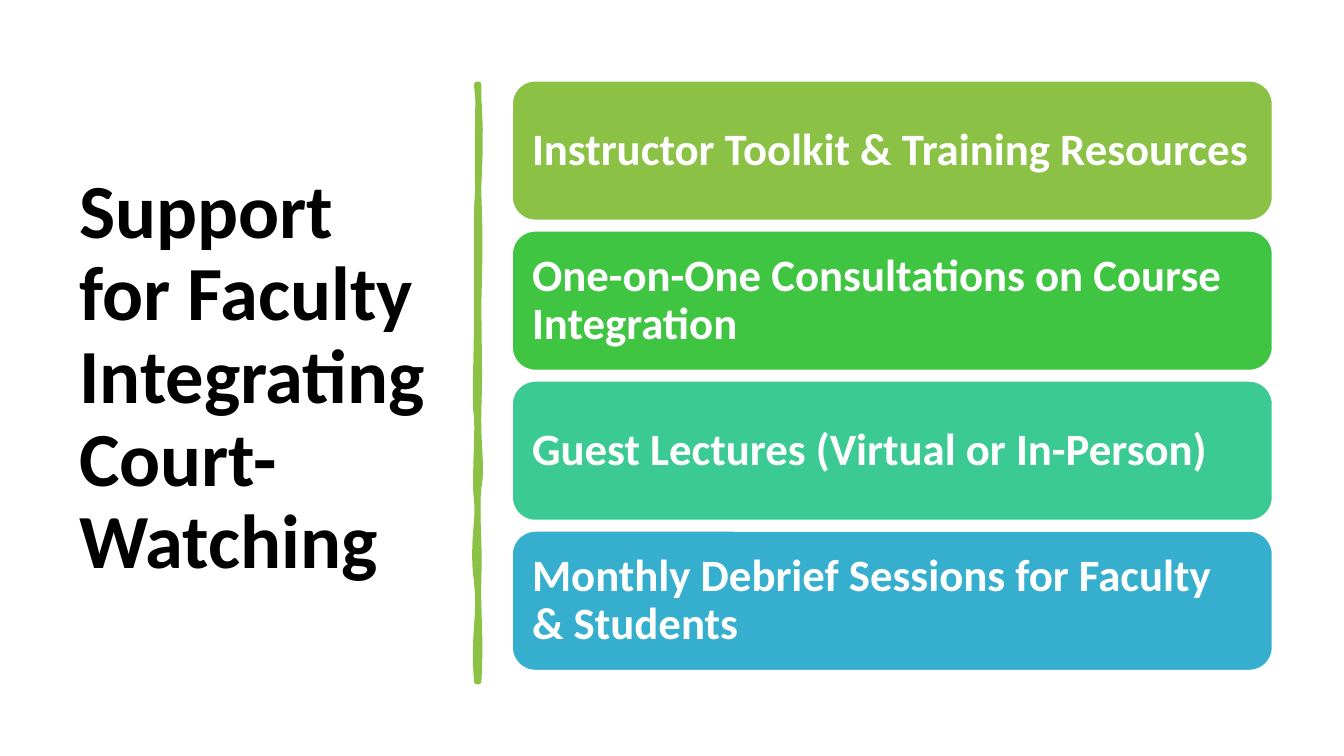
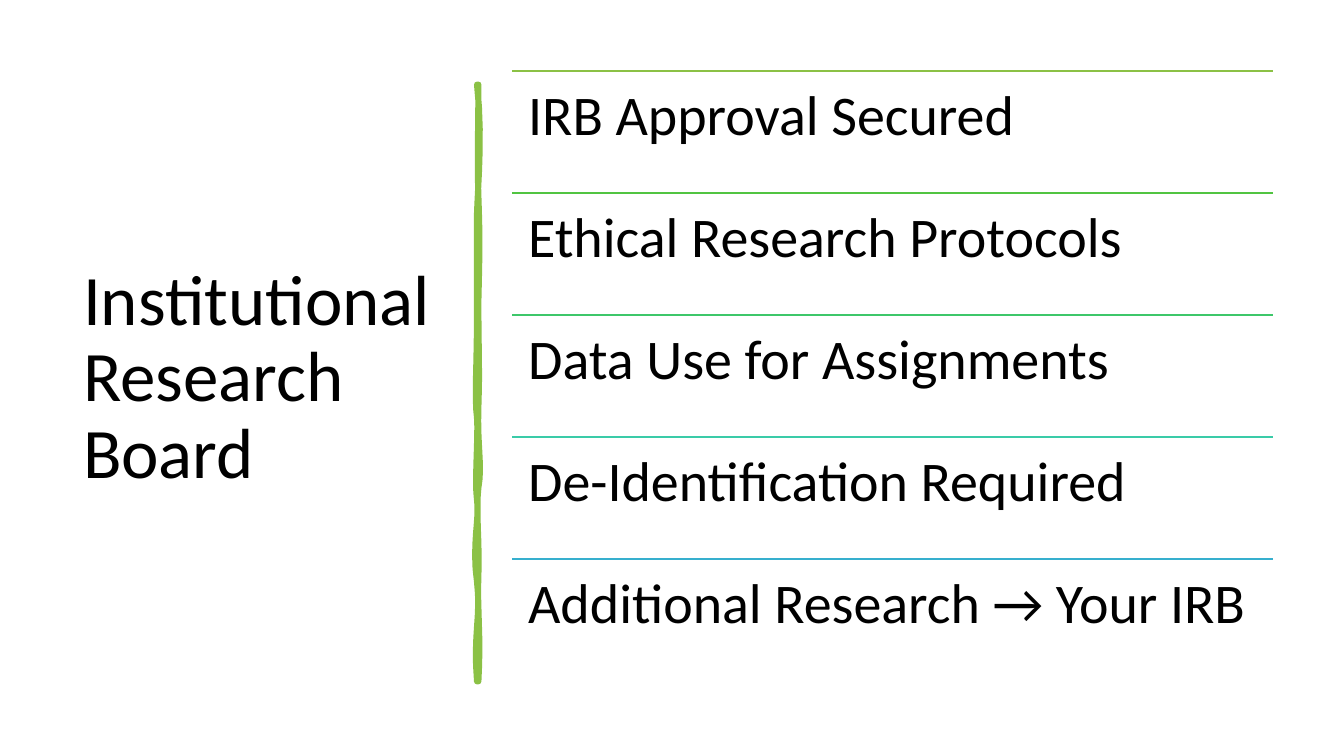
from dataclasses import dataclass

from lxml import etree
from pptx import Presentation
from pptx.dml.color import RGBColor
from pptx.enum.shapes import MSO_CONNECTOR, MSO_SHAPE
from pptx.enum.text import MSO_ANCHOR, PP_ALIGN
from pptx.oxml.ns import qn
from pptx.util import Inches, Pt

ROUNDED = MSO_SHAPE.ROUNDED_RECTANGLE
STRAIGHT = MSO_CONNECTOR.STRAIGHT
TOP, MIDDLE = MSO_ANCHOR.TOP, MSO_ANCHOR.MIDDLE
LEFT = PP_ALIGN.LEFT


@dataclass(frozen=True)
class Theme:
    font: str = "Calibri"
    ink: str = "000000"
    paper: str = "FFFFFF"
    accent: str = "8BC145"
    support_title: int = 41
    review_title: int = 38
    card_text: int = 24
    topic_text: int = 30
    hairline: float = 1
    brush: float = 3.25


THEME = Theme()

prs = Presentation()
prs.slide_width, prs.slide_height = Inches(10), Inches(5.625)

# The slide is a grid of 100 columns by 100 rows.
COL, ROW = prs.slide_width / 100, prs.slide_height / 100
TITLE_BOX = [int(v) for v in (5.2 * COL, 9.42 * ROW, 28 * COL, 81.4 * ROW)]
BODY_LEFT, BODY_WIDTH = int(38.1 * COL), int(56.6 * COL)
CARD_TOP, CARD_PITCH, CARD_HEIGHT = 10.67 * ROW, 19.85 * ROW, int(18.5 * ROW)
TOPIC_TOP, TOPIC_PITCH = 9.42 * ROW, 16.13 * ROW

# Brush stroke in inches: a start, then cubic curves (control, control, end).
STROKE_START = (3.56, 0.63)
STROKE_CURVES = [
    (3.56, 1.03, 3.55, 1.17, 3.56, 1.46),
    (3.57, 1.74, 3.57, 1.85, 3.56, 2.24),
    (3.56, 2.63, 3.57, 2.73, 3.56, 3.03),
    (3.55, 3.32, 3.59, 3.46, 3.56, 3.63),
    (3.54, 3.80, 3.57, 4.06, 3.56, 4.28),
    (3.55, 4.51, 3.58, 4.75, 3.56, 5.07),
    (3.56, 5.07, 3.55, 5.07, 3.55, 5.07),
    (3.52, 4.72, 3.58, 4.59, 3.55, 4.33),
    (3.51, 4.06, 3.57, 3.85, 3.55, 3.72),
    (3.53, 3.59, 3.56, 3.26, 3.55, 3.11),
    (3.53, 2.97, 3.55, 2.70, 3.55, 2.33),
    (3.55, 1.96, 3.55, 1.84, 3.55, 1.68),
    (3.54, 1.52, 3.60, 1.07, 3.55, 0.63),
]
STEPS = 8

stroke_points = []
x0, y0 = STROKE_START
for x1, y1, x2, y2, x3, y3 in STROKE_CURVES:
    for step in range(1, STEPS + 1):
        t = step / STEPS
        a, b, c, d = (1 - t) ** 3, 3 * t * (1 - t) ** 2, 3 * t * t * (1 - t), t ** 3
        stroke_points.append((Inches(a * x0 + b * x1 + c * x2 + d * x3),
                              Inches(a * y0 + b * y1 + c * y2 + d * y3)))
    x0, y0 = x3, y3


def write(shape, text, size, color, inset, anchor=MIDDLE, bold=False):
    """Fill a shape with one left-aligned paragraph; inset is (sides, top and bottom)."""
    frame = shape.text_frame
    frame.word_wrap = True
    frame.vertical_anchor = anchor
    frame.margin_left = frame.margin_right = Inches(inset[0])
    frame.margin_top = frame.margin_bottom = Inches(inset[1])
    paragraph = frame.paragraphs[0]
    paragraph.text = text
    paragraph.alignment = LEFT
    paragraph.line_spacing = 0.9
    font = paragraph.runs[0].font
    font.name, font.size, font.bold = THEME.font, Pt(size), bold
    font.color.rgb = RGBColor.from_string(color)


def titled_slide(title, size, inset, bold):
    """Add a slide with its title on the left and the brush stroke beside it."""
    slide = prs.slides.add_slide(prs.slide_layouts[6])
    slide.background.fill.solid()
    slide.background.fill.fore_color.rgb = RGBColor.from_string(THEME.paper)
    write(slide.shapes.add_textbox(*TITLE_BOX), title, size, THEME.ink, inset, bold=bold)
    outline = slide.shapes.build_freeform(*(Inches(v) for v in STROKE_START))
    outline.add_line_segments(stroke_points, close=True)
    divider = outline.convert_to_shape()
    divider.shadow.inherit = False
    divider.fill.solid()
    divider.fill.fore_color.rgb = RGBColor.from_string(THEME.accent)
    divider.line.color.rgb = RGBColor.from_string(THEME.accent)
    divider.line.width = Pt(THEME.brush)
    return slide


# Slide 1: support offers as coloured cards
support = titled_slide("Support for Faculty Integrating Court-Watching",
                       THEME.support_title, (0.07, 0.04), True)
offers = [
    ("Instructor Toolkit & Training Resources", THEME.accent),
    ("One-on-One Consultations on Course Integration", "40C543"),
    ("Guest Lectures (Virtual or In-Person)", "3BCA93"),
    ("Monthly Debrief Sessions for Faculty & Students", "36AFCE"),
]
for index, (offer, color) in enumerate(offers):
    card = support.shapes.add_shape(ROUNDED, BODY_LEFT, int(CARD_TOP + index * CARD_PITCH),
                                    BODY_WIDTH, CARD_HEIGHT)
    card.shadow.inherit = False
    card.fill.solid()
    card.fill.fore_color.rgb = RGBColor.from_string(color)
    card.line.color.rgb = RGBColor.from_string(THEME.paper)
    card.line.width = Pt(THEME.hairline)
    # The rounded corners already indent the text by about 0.05 inch.
    write(card, offer, THEME.card_text, THEME.paper, (0.1, 0.1), bold=True)

# Slide 2: review topics under coloured rules
review = titled_slide("Institutional Research Board", THEME.review_title, (0.1, 0.05), False)
topics = [
    ("IRB Approval Secured", THEME.accent),
    ("Ethical Research Protocols", "51C441"),
    ("Data Use for Assignments", "3EC76A"),
    ("De-Identification Required", "3ACBA8"),
    ("Additional Research → Your IRB", "36AFCE"),
]
for index, (topic, color) in enumerate(topics):
    top = int(TOPIC_TOP + index * TOPIC_PITCH)
    rule = review.shapes.add_connector(STRAIGHT, BODY_LEFT, top, BODY_LEFT + BODY_WIDTH, top)
    rule.line.color.rgb = RGBColor.from_string(color)
    rule.line.width = Pt(THEME.hairline)
    etree.SubElement(rule._element.spPr, qn("a:effectLst"))
    entry = review.shapes.add_textbox(BODY_LEFT, top, BODY_WIDTH, int(TOPIC_PITCH))
    write(entry, topic, THEME.topic_text, THEME.ink, (0.12, 0.12), anchor=TOP)

prs.save("out.pptx")
